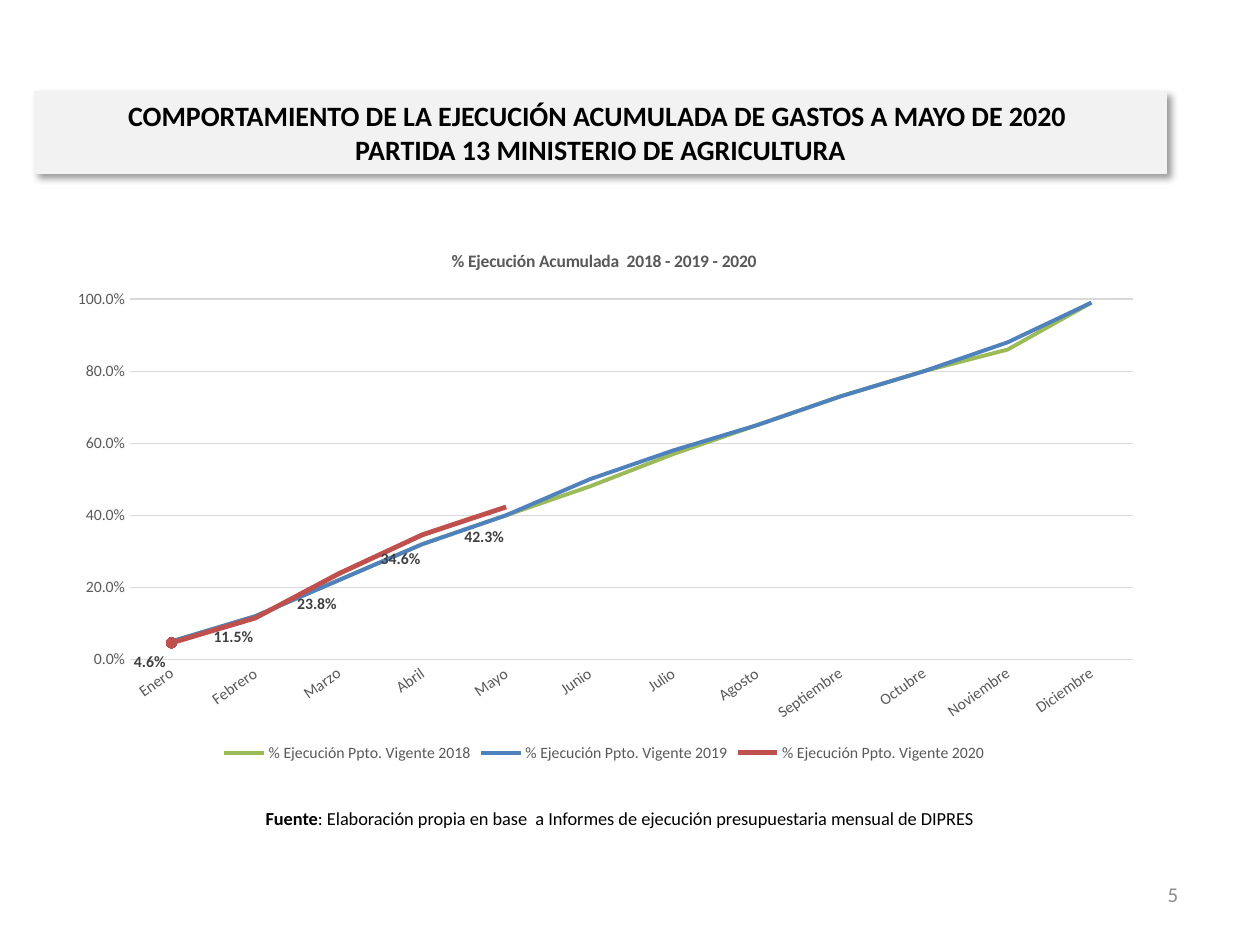
from lxml.etree import SubElement
from pptx import Presentation
from pptx.chart.data import CategoryChartData
from pptx.dml.color import RGBColor
from pptx.enum.chart import (XL_CHART_TYPE, XL_LABEL_POSITION, XL_LEGEND_POSITION,
                             XL_MARKER_STYLE, XL_TICK_MARK)
from pptx.enum.text import MSO_ANCHOR, MSO_AUTO_SIZE, PP_ALIGN
from pptx.oxml import parse_xml
from pptx.oxml.ns import nsdecls, qn
from pptx.util import Pt

BLACK = RGBColor(0x00, 0x00, 0x00)
DARK_GREY = RGBColor(0x40, 0x40, 0x40)
TEXT_GREY = RGBColor(0x59, 0x59, 0x59)
NUMBER_GREY = RGBColor(0x8C, 0x8C, 0x8C)
GRID_GREY = RGBColor(0xD9, 0xD9, 0xD9)
BANNER_GREY = RGBColor(0xF2, 0xF2, 0xF2)
GREEN = RGBColor(0x9B, 0xBB, 0x59)
BLUE = RGBColor(0x4F, 0x81, 0xBD)
RED = RGBColor(0xC0, 0x50, 0x4D)

MONTHS = ["Enero", "Febrero", "Marzo", "Abril", "Mayo", "Junio", "Julio", "Agosto",
          "Septiembre", "Octubre", "Noviembre", "Diciembre"]
# year, cumulative share by month, colour, line width
EXECUTION = [
    (2018, [0.05, 0.12, 0.22, 0.32, 0.4, 0.48, 0.57, 0.65, 0.73, 0.8, 0.86, 0.99], GREEN, 2.25),
    (2019, [0.05, 0.12, 0.22, 0.32, 0.4, 0.5, 0.58, 0.65, 0.73, 0.8, 0.88, 0.99], BLUE, 2.25),
    (2020, [0.046, 0.115, 0.238, 0.346, 0.423], RED, 2.75),
]
# downward shift of each 2020 label, as a share of the chart height
LABEL_DROPS = [0, 0.01, 0.03, 0.02, 0.03]
PERCENT = "0.0%"


def manual_layout(**settings):
    layout = parse_xml(f"<c:layout {nsdecls('c')}><c:manualLayout/></c:layout>")
    for name, value in settings.items():
        SubElement(layout[0], qn(f"c:{name}"), val=str(value))
    return layout


class SlideBuilder:
    def __init__(self, page, font_name="Calibri"):
        self.page = page
        self.font_name = font_name

    def style(self, font, size, color, bold=False):
        font.name, font.size, font.bold = self.font_name, Pt(size), bold
        font.color.rgb = color

    def title(self, text, left, top, width, height):
        banner = self.page.shapes.title
        banner.left, banner.top, banner.width, banner.height = map(Pt, (left, top, width, height))
        banner.fill.solid()
        banner.fill.fore_color.rgb = BANNER_GREY
        banner.line.color.rgb = BANNER_GREY
        banner.line.width = Pt(0.75)
        banner._element.spPr.append(parse_xml(
            f"<a:effectLst {nsdecls('a')}>"
            f'<a:outerShdw blurRad="{Pt(4)}" dist="{Pt(3)}" dir="2700000" algn="tl" rotWithShape="0">'
            '<a:srgbClr val="000000"><a:alpha val="40000"/></a:srgbClr>'
            "</a:outerShdw></a:effectLst>"))
        frame = banner.text_frame
        frame.text = text
        frame.auto_size = MSO_AUTO_SIZE.NONE
        frame.vertical_anchor = MSO_ANCHOR.MIDDLE
        para = frame.paragraphs[0]
        para.alignment = PP_ALIGN.CENTER
        for span in para.runs:
            self.style(span.font, 16, BLACK, bold=True)

    def text(self, parts, left, top, width, height, size, color, alignment):
        """Add one line of text; parts are (wording, bold) pairs."""
        box = self.page.shapes.add_textbox(*map(Pt, (left, top, width, height)))
        frame = box.text_frame
        frame.word_wrap = True
        frame.vertical_anchor = MSO_ANCHOR.MIDDLE
        para = frame.paragraphs[0]
        para.alignment = alignment
        for wording, bold in parts:
            span = para.add_run()
            span.text = wording
            self.style(span.font, size, color, bold)

    def line_chart(self, title, left, top, width, height):
        data = CategoryChartData(number_format=PERCENT)
        data.categories = MONTHS
        for year, shares, _, _ in EXECUTION:
            padding = [None] * (len(MONTHS) - len(shares))
            data.add_series(f"% Ejecución Ppto. Vigente {year}", shares + padding)
        chart = self.page.shapes.add_chart(
            XL_CHART_TYPE.LINE, *map(Pt, (left, top, width, height)), data).chart
        self.style(chart.font, 10, BLACK)

        chart.has_title = True
        chart.chart_title.include_in_layout = False
        chart.chart_title.text_frame.text = title
        self.style(chart.chart_title.text_frame.paragraphs[0].runs[0].font, 10, TEXT_GREY, bold=True)
        chart.has_legend = True
        chart.legend.position = XL_LEGEND_POSITION.BOTTOM
        chart.legend.include_in_layout = False
        self.style(chart.legend.font, 9, TEXT_GREY)

        plot_area = chart._chartSpace.chart.plotArea
        for layout in plot_area.findall(qn("c:layout")):
            plot_area.remove(layout)
        plot_area.insert(0, manual_layout(layoutTarget="inner", xMode="edge", yMode="edge",
                                          x=0.07, y=0.13, w=0.91, h=0.67))
        self.axes(chart)
        for series, (_, _, color, line_width) in zip(chart.plots[0].series, EXECUTION):
            series.smooth = False
            series.marker.style = XL_MARKER_STYLE.NONE
            series.format.line.color.rgb = color
            series.format.line.width = Pt(line_width)
        self.current_year(chart.plots[0].series[-1], *EXECUTION[-1][2:])

    def axes(self, chart):
        months, shares = chart.category_axis, chart.value_axis
        for axis in (months, shares):
            axis.major_tick_mark = axis.minor_tick_mark = XL_TICK_MARK.NONE
            self.style(axis.tick_labels.font, 9, TEXT_GREY)
        months.format.line.color.rgb = GRID_GREY
        months.format.line.width = Pt(1)
        months._element.xpath("c:txPr/a:bodyPr")[0].set("rot", str(-35 * 60000))
        shares.minimum_scale, shares.maximum_scale, shares.major_unit = 0, 1, 0.2
        shares.tick_labels.number_format = PERCENT
        shares.tick_labels.number_format_is_linked = False
        shares.format.line.fill.background()
        shares.major_gridlines.format.line.color.rgb = GRID_GREY
        shares.major_gridlines.format.line.width = Pt(0.75)

    def current_year(self, series, color, line_width):
        """Label each month to the lower left, without leader lines, and mark the first one."""
        labels = series.data_labels
        labels.show_value = True
        labels.number_format = PERCENT
        labels.number_format_is_linked = False
        self.style(labels.font, 9, DARK_GREY, bold=True)
        for index in range(len(LABEL_DROPS)):
            label = series.points[index].data_label
            self.style(label.font, 9, DARK_GREY, bold=True)
            label.position = XL_LABEL_POSITION.BELOW
        for label_xml, drop in zip(series._element.xpath("c:dLbls/c:dLbl"), LABEL_DROPS):
            label_xml.insert(1, manual_layout(x=-0.02, y=drop))
        for leader_lines in series._element.xpath("c:dLbls/c:showLeaderLines"):
            leader_lines.set("val", "0")

        first = series.points[0]
        first.format.line.color.rgb = color
        first.format.line.width = Pt(line_width)
        first.marker.style = XL_MARKER_STYLE.CIRCLE
        first.marker.size = 6
        first.marker.format.fill.solid()
        first.marker.format.fill.fore_color.rgb = color
        first.marker.format.line.color.rgb = color


def main():
    deck = Presentation()
    deck.slide_width, deck.slide_height = Pt(720), Pt(540)
    title_only = deck.slide_layouts[5]
    builder = SlideBuilder(deck.slides.add_slide(title_only))
    builder.text([("5", False)], 512.6, 496.8, 167.8, 28.8, 12, NUMBER_GREY, PP_ALIGN.RIGHT)
    builder.title("COMPORTAMIENTO DE LA EJECUCIÓN ACUMULADA DE GASTOS A MAYO DE 2020 \v"
                  "PARTIDA 13 MINISTERIO DE AGRICULTURA", 19.8, 52.2, 646.6, 46.8)
    builder.text([("Fuente", True),
                  (": Elaboración propia en base  a Informes de ejecución presupuestaria "
                   "mensual de DIPRES", False)],
                 73.4, 452.9, 561.6, 28.8, 10.5, BLACK, PP_ALIGN.CENTER)
    builder.line_chart("% Ejecución Acumulada  2018 - 2019 - 2020", 30.2, 131, 630, 307.4)
    deck.save("out.pptx")


if __name__ == "__main__":
    main()
